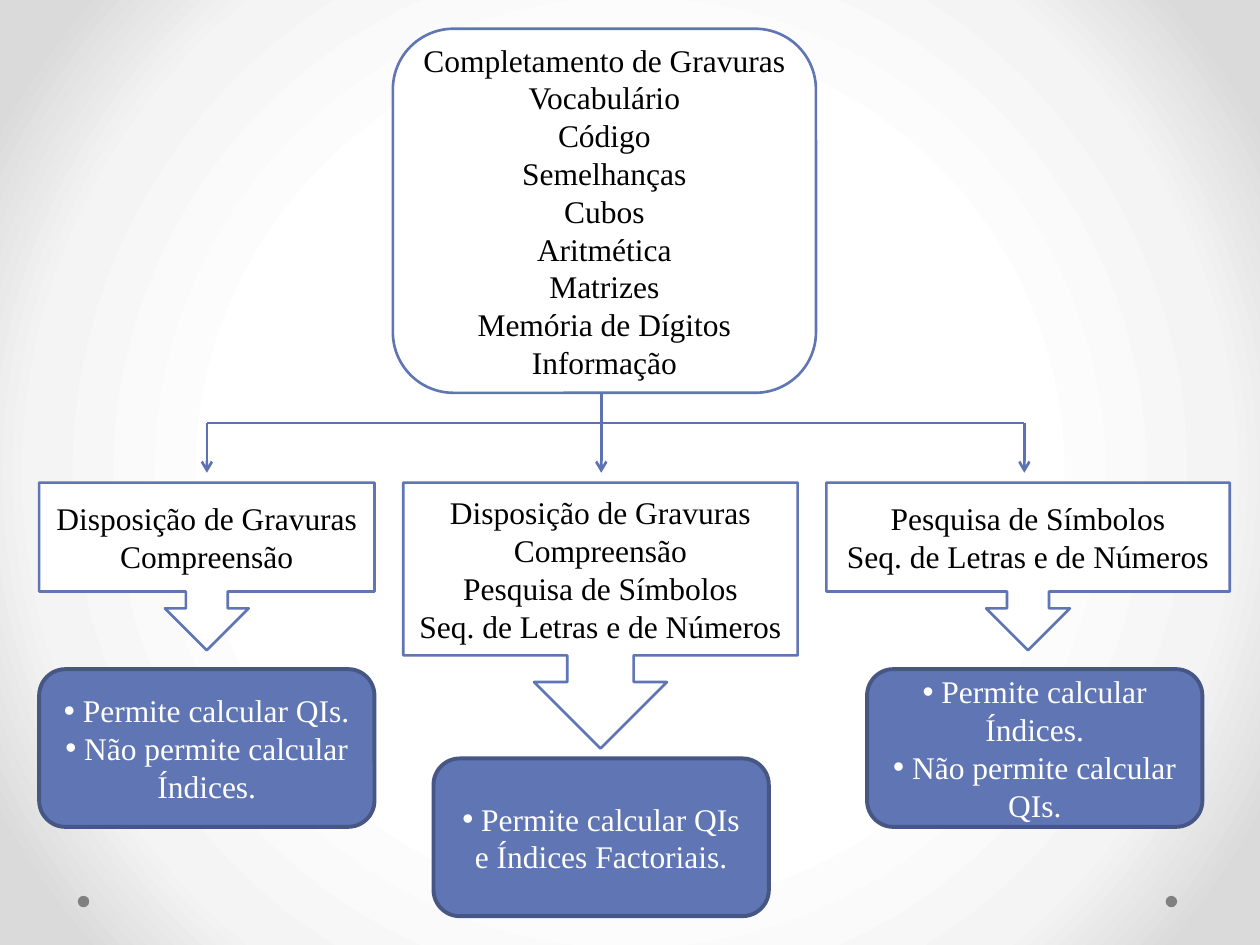
from lxml import etree
from pptx import Presentation
from pptx import util as u
from pptx.dml.color import RGBColor
from pptx.enum import shapes, text
from pptx.oxml import parse_xml
from pptx.oxml.ns import nsdecls, qn

HUES = {"white": "FFFFFF", "black": "000000", "blue": "6076B4", "navy": "475785",
        "wire": "5C72B2", "dot": "808080", "pale": "F4F4F4", "edge": "DADADA"}
KIND = shapes.MSO_SHAPE


def hue(name):
    return RGBColor.from_string(HUES[name])


def write(frame, rows, size=18, font="Times New Roman", color="black", bullet=False):
    frame.word_wrap = True
    frame.vertical_anchor = text.MSO_ANCHOR.MIDDLE
    for i, row in enumerate(rows):
        para = frame.paragraphs[0] if i == 0 else frame.add_paragraph()
        para.alignment = text.PP_ALIGN.CENTER
        run = para.add_run()
        run.text = f" {row}" if bullet else row
        run.font.size = u.Pt(size)
        run.font.name = font
        run.font.color.rgb = hue(color)
        if bullet:
            props = para._p.get_or_add_pPr()
            props.set("marL", "0")
            props.set("indent", "0")
            etree.SubElement(props, qn("a:buFont")).set("typeface", "Arial")
            etree.SubElement(props, qn("a:buChar")).set("char", "•")


class Chart:
    """Holds the current slide and draws the parts of the flow on it; lengths in cm."""

    def __init__(self, slide):
        self.slide = slide

    def glow(self, stops):
        """Radial background, from the centre outwards."""
        marks = "".join(f'<a:gs pos="{pos * 1000}"><a:srgbClr val="{HUES[name]}"/></a:gs>'
                        for pos, name in stops)
        fill = self.slide.background.fill
        fill.solid()
        props = self.slide._element.cSld.bg.bgPr
        props.replace(props.find(qn("a:solidFill")), parse_xml(
            f'<a:gradFill {nsdecls("a")} rotWithShape="1"><a:gsLst>{marks}</a:gsLst>'
            '<a:path path="circle"><a:fillToRect l="50000" t="50000" r="50000" b="50000"/>'
            '</a:path></a:gradFill>'))

    def shape(self, kind, x, y, w, h, fill, line=None, width=1.5):
        item = self.slide.shapes.add_shape(kind, u.Cm(x), u.Cm(y), u.Cm(w), u.Cm(h))
        item.shadow.inherit = False
        item.fill.solid()
        item.fill.fore_color.rgb = hue(fill)
        if line:
            item.line.color.rgb = hue(line)
            item.line.width = u.Pt(width)
        else:
            item.line.fill.background()
        return item

    def dot(self, x, y):
        self.shape(KIND.OVAL, x, y, 0.23, 0.23, "dot")

    def tests(self, kind, x, y, w, h, rows):
        write(self.shape(kind, x, y, w, h, "white", "blue").text_frame, rows)

    def result(self, x, y, rows):
        item = self.shape(KIND.ROUNDED_RECTANGLE, x, y, 6.76, 3.18, "blue", "navy", 2.25)
        write(item.text_frame, rows, color="white", bullet=True)

    def line(self, x1, y1, x2, y2, arrow=False):
        item = self.slide.shapes.add_connector(
            shapes.MSO_CONNECTOR.STRAIGHT, u.Cm(x1), u.Cm(y1), u.Cm(x2), u.Cm(y2))
        item.line.color.rgb = hue("wire")
        item.line.width = u.Pt(1.5)
        if arrow:
            etree.SubElement(item.line._get_or_add_ln(), qn("a:tailEnd")).set("type", "arrow")
        etree.SubElement(item._element.spPr, qn("a:effectLst"))


def main():
    deck = Presentation()
    deck.slide_width, deck.slide_height = u.Cm(25.4), u.Cm(19.05)
    flow = Chart(deck.slides.add_slide(deck.slide_layouts[6]))
    flow.glow([(50, "white"), (76, "pale"), (92, "edge")])
    for x in (23.5, 1.57):
        flow.dot(x, 18.06)

    flow.tests(KIND.ROUNDED_RECTANGLE, 7.92, 0.58, 8.53, 7.34, [
        "Completamento de Gravuras", "Vocabulário", "Código", "Semelhanças", "Cubos",
        "Aritmética", "Matrizes", "Memória de Dígitos", "Informação"])

    left, mid, right = 4.17, 12.12, 20.65
    base, bar, tip = 7.92, 8.53, 9.53
    flow.line(left, bar, right, bar)
    for x, y in ((left, bar), (right, bar), (mid, base)):
        flow.line(x, y, x, tip, arrow=True)

    story = ["Disposição de Gravuras", "Compreensão"]
    signs = ["Pesquisa de Símbolos", "Seq. de Letras e de Números"]
    for x, w, h, rows in ((0.79, 6.76, 3.38, story),
                          (8.13, 7.95, 5.36, story + signs),
                          (16.66, 8.13, 3.38, signs)):
        flow.tests(KIND.DOWN_ARROW_CALLOUT, x, 9.73, w, h, rows)

    flow.result(0.79, 13.49, ["Permite calcular QIs.", "Não permite calcular Índices."])
    flow.result(8.74, 15.29, ["Permite calcular QIs e Índices Factoriais."])
    flow.result(17.48, 13.49, ["Permite calcular Índices.", "Não permite calcular QIs."])
    deck.save("out.pptx")


if __name__ == "__main__":
    main()
